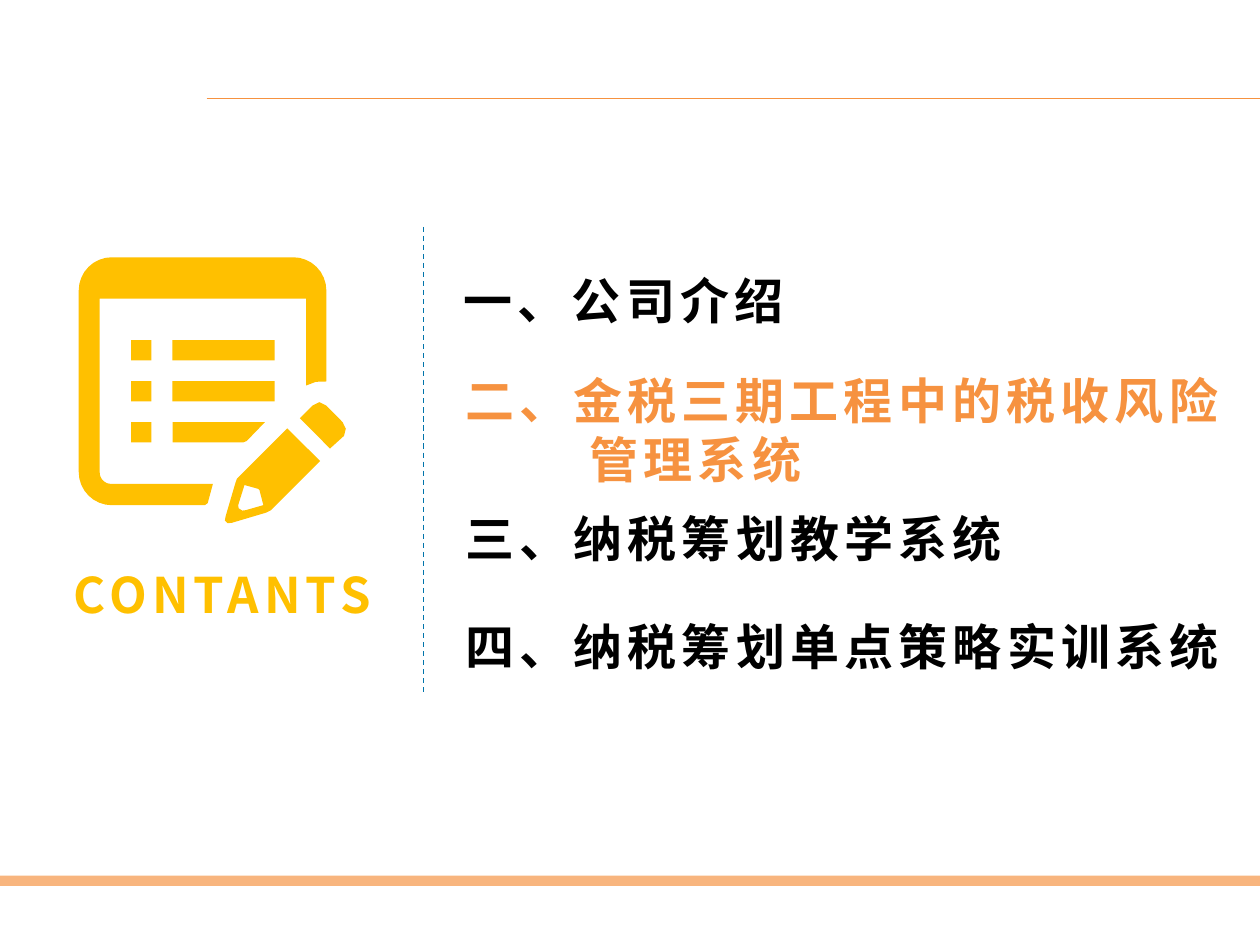
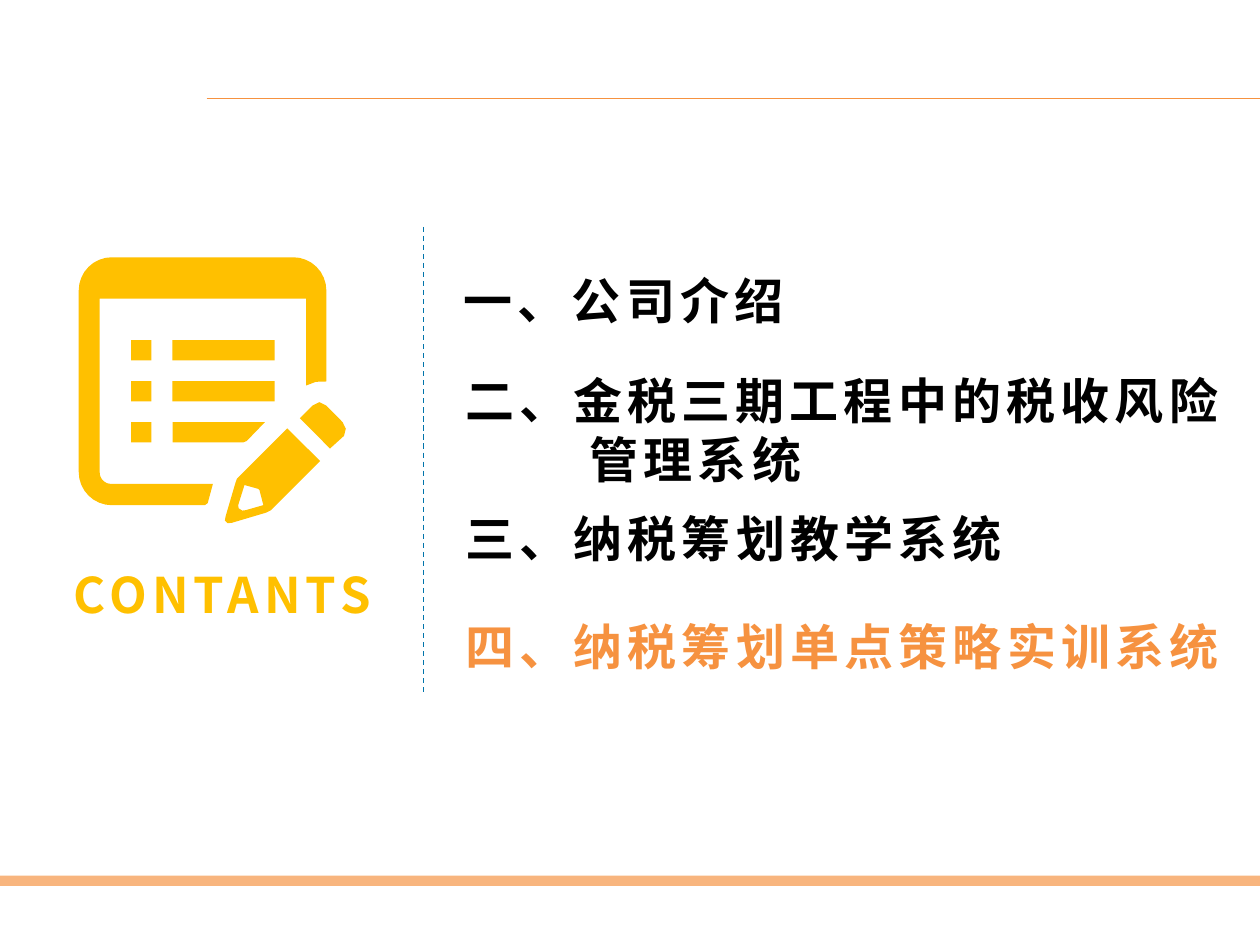
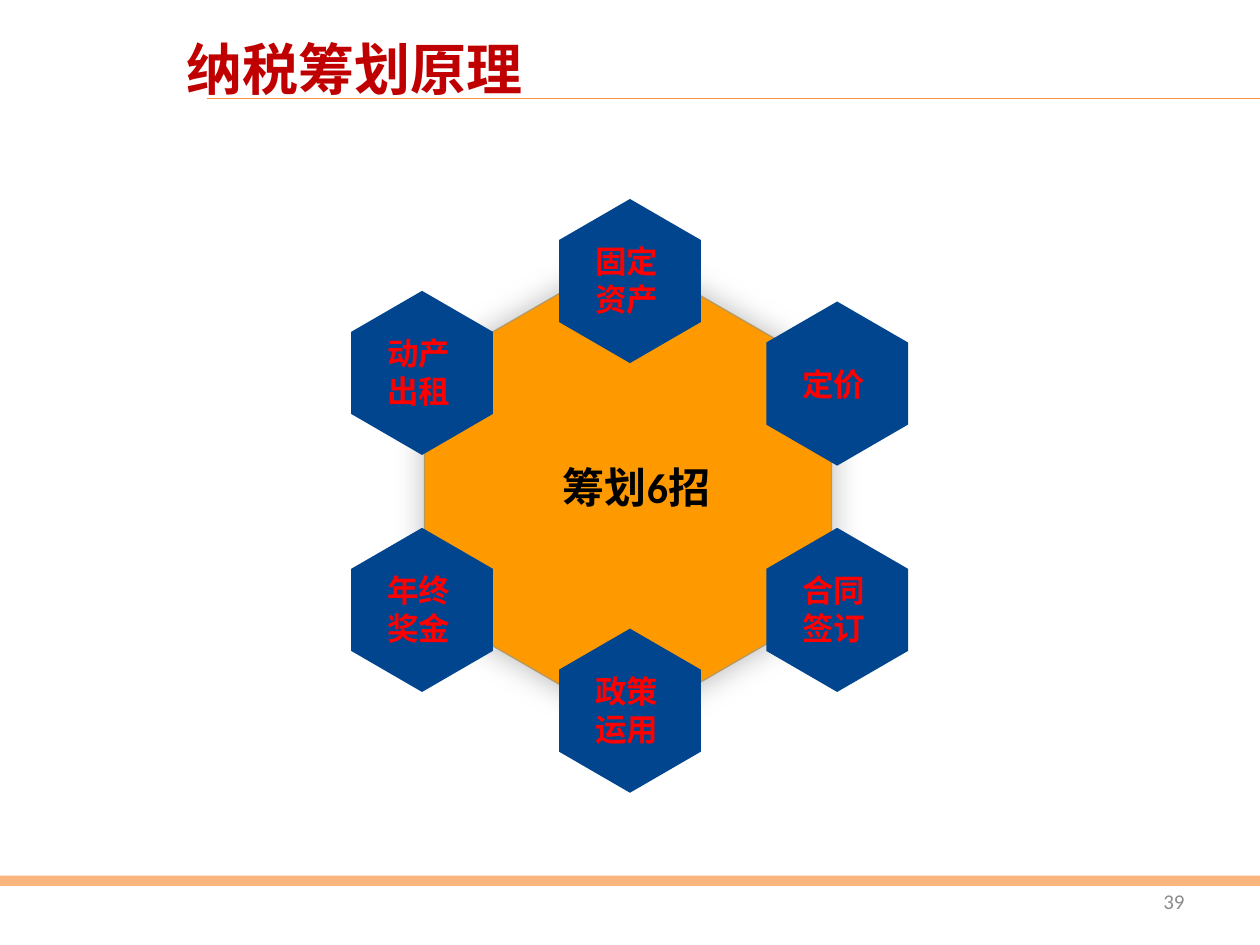
from dataclasses import dataclass
from math import cos, radians, sin

from lxml import etree
from pptx import Presentation
from pptx.dml.color import RGBColor
from pptx.enum.dml import MSO_LINE
from pptx.enum.shapes import MSO_CONNECTOR, MSO_SHAPE
from pptx.enum.text import MSO_ANCHOR, MSO_AUTO_SIZE, PP_ALIGN
from pptx.oxml.ns import qn
from pptx.util import Pt

ORANGE = RGBColor(0xF6, 0x92, 0x40)
GOLD = RGBColor(0xFF, 0xC0, 0x00)
AMBER = RGBColor(0xFF, 0x99, 0x00)
TAN = RGBColor(0xB7, 0x98, 0x5F)
NAVY = RGBColor(0x01, 0x45, 0x8E)
BLUE = RGBColor(0x01, 0x74, 0xAB)
BLACK = RGBColor(0, 0, 0)
RED = RGBColor(0xFF, 0, 0)
CRIMSON = RGBColor(0xC0, 0, 0)
GREY = RGBColor(0x8C, 0x8C, 0x8C)

NOTO = "Noto Sans CJK SC"
CALIBRI = "Calibri"
LEFT, CENTER, RIGHT = PP_ALIGN.LEFT, PP_ALIGN.CENTER, PP_ALIGN.RIGHT
TOP, MIDDLE = MSO_ANCHOR.TOP, MSO_ANCHOR.MIDDLE
GROW = MSO_AUTO_SIZE.SHAPE_TO_FIT_TEXT
FIXED = MSO_AUTO_SIZE.NONE
RECT = MSO_SHAPE.RECTANGLE
STRAIGHT = MSO_CONNECTOR.STRAIGHT
DASH = MSO_LINE.DASH

WIDTH, HEIGHT = 720, 540
TITLE_ONLY = 5
HEX_W, HEX_H = 81, 93.8


@dataclass
class Text:
    words: str
    x: float
    y: float
    w: float
    h: float
    size: float = 28
    color: RGBColor = BLACK
    font: str = NOTO
    bold: bool = True
    gap: float = 0
    align: PP_ALIGN = LEFT
    anchor: MSO_ANCHOR = TOP
    fit: MSO_AUTO_SIZE = GROW
    hang: float = 0


@dataclass
class Item:
    rank: int
    words: str
    x: float
    y: float
    w: float
    h: float = 41
    hang: float = 0


@dataclass
class Move:
    words: str
    x: float
    y: float
    h: float = 51.2


ITEMS = [
    Item(1, "一、公司介绍", 257.8, 151.2, 293.8),
    Item(2, "二、", 258.8, 208.1, 60),
    Item(3, "三、纳税筹划教学系统", 258.8, 286.9, 450),
    Item(4, "四、纳税筹划单点策略实训系统", 258.8, 348.5, 450),
    Item(2, "金税三期工程中的税收风险管理系统", 320.4, 208.1, 399.6, 74.9, 9.4),
]

MOVES = [
    Move("固定资产", 360, 160.6),
    Move("定价", 478.4, 219.2, 28.8),
    Move("合同签订", 478.4, 348.5),
    Move("政策运用", 360, 406.1),
    Move("年终奖金", 241.2, 348.5),
    Move("动产出租", 241.2, 213.1),
]

Points = list[tuple[float, float]]


def arc(x: float, y: float, r: float, start: int, end: int) -> Points:
    turns = [radians(start + (end - start) * n / 8) for n in range(9)]
    return [(x + r * cos(t), y + r * sin(t)) for t in turns]


PAD = [
    (121.7, 276.5), (118.7, 287.5), (117, 288.7),
    *arc(64, 269.7, 19, 90, 180),
    *arc(64, 166, 19, 180, 270),
    *arc(167.5, 166, 19, 270, 360),
    (186.5, 218), (180.5, 218.2), (175, 220.3), (175, 170.6), (57, 170.6),
    *arc(63.5, 270, 6.5, 180, 90),
]
PENCIL = [
    (164.2, 244.8), (182.9, 263.5), (154.8, 291.6), (152, 293),
    (132.5, 298.8), (130, 299), (128.5, 297.5), (128.9, 295.2),
    (134.6, 275.8), (135.4, 273.6),
]
NIB = [
    (139.7, 277.2), (136.1, 288.7), (136.4, 290.5), (138.5, 291.8),
    (140.4, 291.6), (150.5, 288.7), (148.3, 280.1), (147.6, 279.4),
]
ERASER = [
    (171.4, 239), (178.6, 231.8), (182.5, 229.8), (186.5, 231.8),
    (195.8, 241.2), (197.6, 245), (196.6, 249.1), (188.6, 256.3),
]
STUB = [(98.6, 241.2), (151.4, 241.2), (141, 252), (139, 252.8), (98.6, 252.8)]


def paint(shape, color: RGBColor) -> None:
    shape.shadow.inherit = False
    shape.fill.solid()
    shape.fill.fore_color.rgb = color
    shape.line.fill.background()


def block(shapes, x: float, y: float, w: float, h: float, color: RGBColor):
    shape = shapes.add_shape(RECT, Pt(x), Pt(y), Pt(w), Pt(h))
    paint(shape, color)
    return shape


def outline(shapes, color: RGBColor, *rings: Points):
    pen = None
    for ring in rings:
        dots = [(Pt(x), Pt(y)) for x, y in ring]
        if pen is None:
            pen = shapes.build_freeform(*dots[0])
        else:
            pen.move_to(*dots[0])
        pen.add_line_segments(dots[1:], close=True)
    shape = pen.convert_to_shape()
    paint(shape, color)
    return shape


def hexagon(shapes, x: float, y: float, w: float, h: float, color: RGBColor):
    ring = [
        (x, y - h / 2), (x + w / 2, y - h / 4), (x + w / 2, y + h / 4),
        (x, y + h / 2), (x - w / 2, y + h / 4), (x - w / 2, y - h / 4),
    ]
    return outline(shapes, color, ring)


def rule(shapes, x1: float, y1: float, x2: float, y2: float, color: RGBColor):
    line = shapes.add_connector(STRAIGHT, Pt(x1), Pt(y1), Pt(x2), Pt(y2))
    line.line.color.rgb = color
    line.line.width = Pt(0.75)
    etree.SubElement(line.element.spPr, qn("a:effectLst"))
    return line


def write(shape, text: Text) -> None:
    shape.left, shape.top = Pt(text.x), Pt(text.y)
    shape.width, shape.height = Pt(text.w), Pt(text.h)
    frame = shape.text_frame
    frame.text = text.words
    frame.word_wrap = True
    frame.auto_size = text.fit
    frame.vertical_anchor = text.anchor
    para = frame.paragraphs[0]
    para.alignment = text.align
    if text.hang:
        for props in shape.element.iter(qn("a:pPr")):
            props.set("marL", str(Pt(text.hang)))
            props.set("indent", str(-Pt(text.hang)))
    for run in para.runs:
        run.font.size = Pt(text.size)
        run.font.bold = text.bold
        run.font.color.rgb = text.color
        run.font.name = text.font
    for props in shape.element.iter(qn("a:rPr")):
        if text.gap:
            props.set("spc", str(int(text.gap * 100)))
        if text.font == NOTO:
            etree.SubElement(props, qn("a:ea"), typeface=NOTO)


def label(shapes, text: Text) -> None:
    write(shapes.add_textbox(0, 0, 0, 0), text)


def trim(deck, slide) -> None:
    line = rule(slide.shapes, 118.1, 56.2, WIDTH, 56.2, ORANGE)
    band = block(slide.shapes, 0, 500.4, WIDTH, 5.8, ORANGE)
    for tint in band.element.spPr.iter(qn("a:srgbClr")):
        etree.SubElement(tint, qn("a:alpha"), val="67000")
    for rank, part in enumerate((line, band), 90):
        part.element.xpath(".//p:cNvPr")[0].set("id", str(rank))
        deck.slide_master.shapes.element.append(part.element)


def icon(slide) -> None:
    shapes = slide.shapes.add_group_shape().shapes
    outline(shapes, GOLD, PAD)
    outline(shapes, GOLD, PENCIL, NIB)
    outline(shapes, GOLD, ERASER)
    outline(shapes, GOLD, STUB)
    for row in range(3):
        y = 194.4 + 23.4 * row
        block(shapes, 74.9, y, 11.6, 11.6, GOLD)
        if row < 2:
            block(shapes, 98.6, y, 58.4, 11.6, GOLD)


def agenda(slide, chosen: int) -> None:
    rule(slide.shapes, 241.9, 129.6, 241.9, 396, BLUE).line.dash_style = DASH
    icon(slide)
    write(slide.shapes.title, Text(
        "CONTANTS", 22.3, 319, 209.5, 41, color=GOLD, gap=3, align=CENTER))
    for item in ITEMS:
        color = ORANGE if item.rank == chosen else BLACK
        label(slide.shapes, Text(
            item.words, item.x, item.y, item.w, item.h,
            color=color, gap=3, hang=item.hang))


def wheel(slide) -> None:
    shapes = slide.shapes
    write(shapes.title, Text(
        "纳税筹划原理", 92.5, 16.2, 220, 46.1, 32, CRIMSON, align=CENTER))
    hub = hexagon(shapes, 358.9, 279.4, 232.6, 268.6, AMBER)
    hub.line.color.rgb = TAN
    hub.line.width = Pt(0.75)
    effects = hub.element.spPr.find(qn("a:effectLst"))
    glow = etree.SubElement(
        effects, qn("a:outerShdw"), blurRad=str(Pt(18)), dist="0", dir="0",
        algn="ctr", rotWithShape="0")
    tint = etree.SubElement(glow, qn("a:srgbClr"), val=str(BLACK))
    etree.SubElement(tint, qn("a:alpha"), val="28000")
    for move in MOVES:
        hexagon(shapes, move.x, move.y, HEX_W, HEX_H, NAVY)
    label(shapes, Text(
        "筹划6招", 314.6, 259.9, 123.1, 36, 24, font=CALIBRI))
    for move in MOVES:
        label(shapes, Text(
            move.words, move.x - 27, move.y - move.h / 2, 54, move.h,
            18, RED, CALIBRI))
    label(shapes, Text(
        "39", 516.2, 500.4, 167.8, 28.8, 12, GREY, CALIBRI, False,
        align=RIGHT, anchor=MIDDLE, fit=FIXED))


def main() -> None:
    deck = Presentation()
    deck.slide_width, deck.slide_height = Pt(WIDTH), Pt(HEIGHT)
    layout = deck.slide_layouts[TITLE_ONLY]
    first, second, third = [deck.slides.add_slide(layout) for _ in range(3)]
    trim(deck, first)
    agenda(first, 2)
    agenda(second, 4)
    wheel(third)
    deck.save("out.pptx")


if __name__ == "__main__":
    main()
